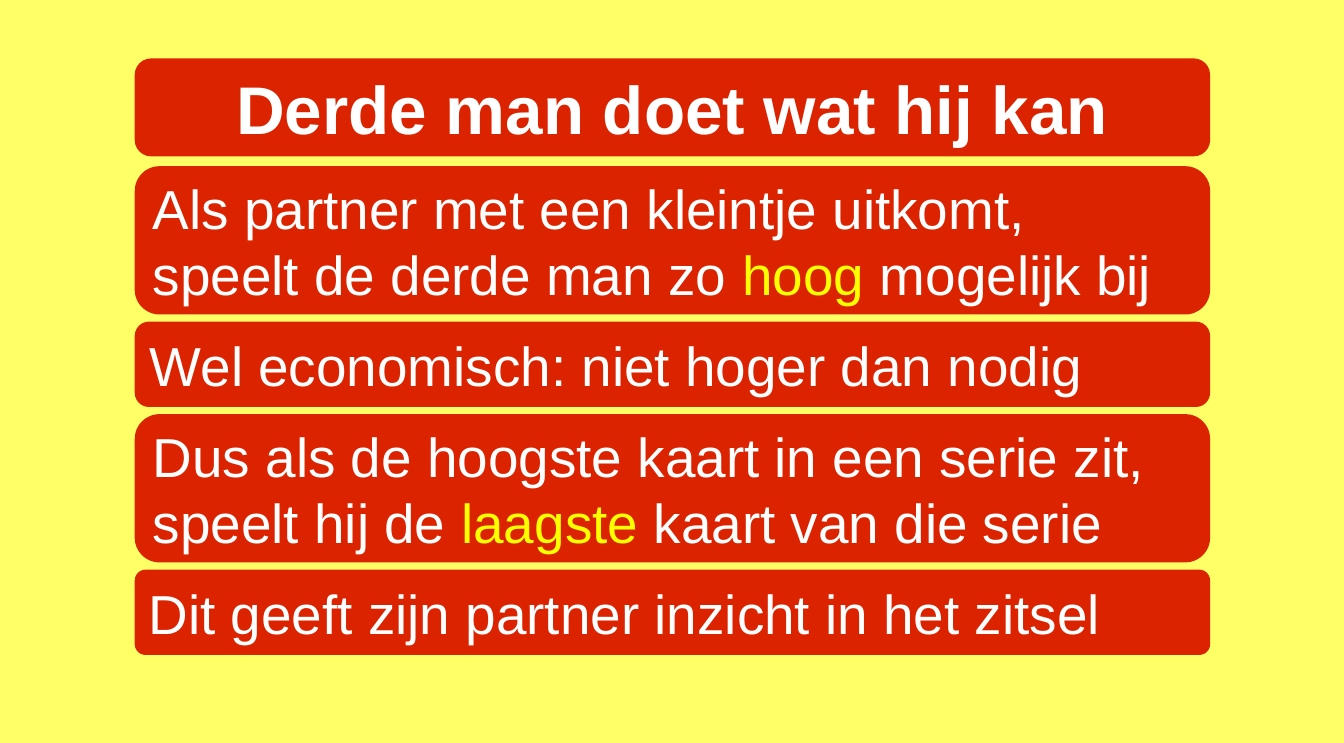
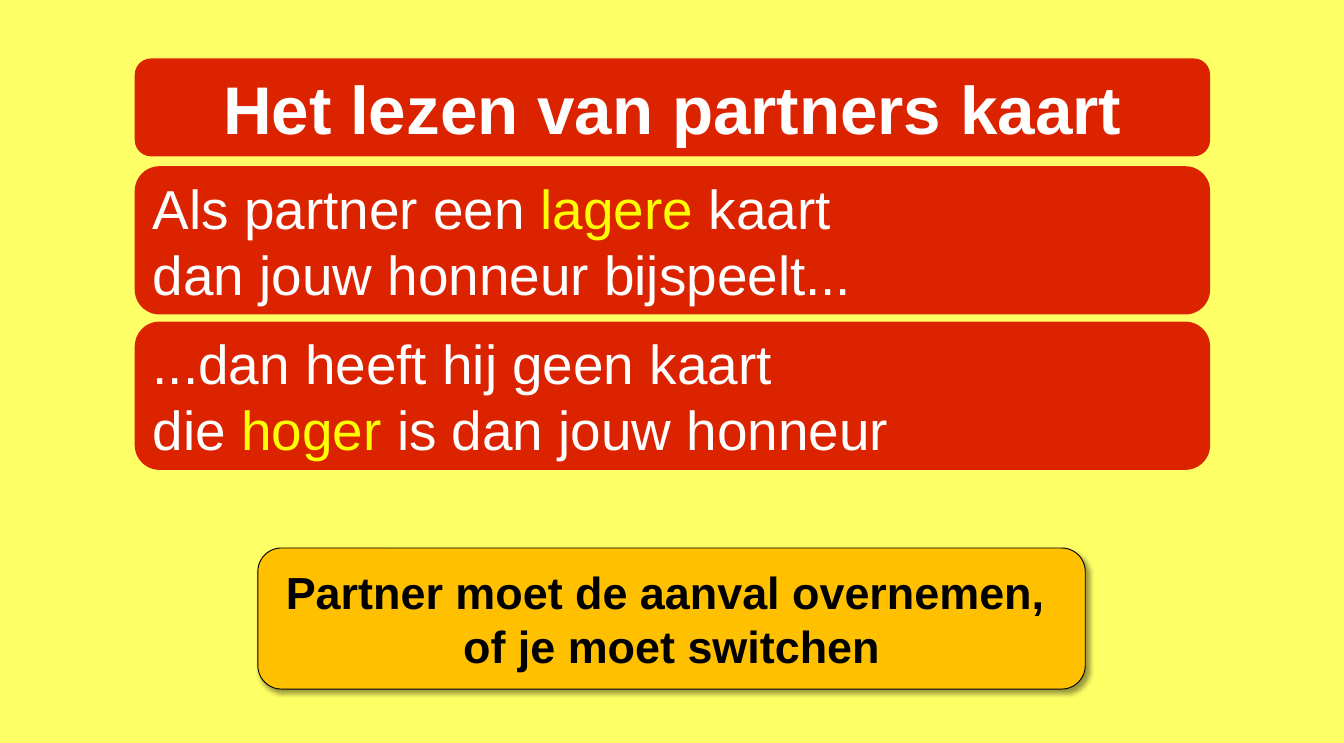
"""Build two slides on third-hand play in bridge."""
from lxml import etree
from pptx import Presentation
from pptx.dml.color import RGBColor
from pptx.enum.shapes import MSO_SHAPE
from pptx.enum.text import MSO_ANCHOR, MSO_AUTO_SIZE, PP_ALIGN
from pptx.oxml.ns import qn
from pptx.util import Inches, Pt

COLORS = {"page": "FFFF66", "card": "DC2300", "text": "FFFFFF",
          "accent": "FFFF00", "callout": "FFC000", "ink": "000000"}
FONT = "Arial"
LEFT, WIDTH = 1.5, 11.97
TITLE_TOP, TITLE_H = 0.65, 1.09
CARDS_TOP, GAP = 1.85, 0.08
ONE_LINE, TWO_LINES = 0.95, 1.65
RADIUS = 0.167

SLIDES = [
    ("Derde man doet wat hij kan", [
        (TWO_LINES, RADIUS, ["Als partner met een kleintje uitkomt,",
                             "speelt de derde man zo *hoog* mogelijk bij"]),
        (ONE_LINE, RADIUS, ["Wel economisch: niet hoger dan nodig"]),
        (TWO_LINES, RADIUS, ["Dus als de hoogste kaart in een serie zit, "
                             "speelt hij de *laagste* kaart van die serie"]),
        (ONE_LINE, 0.127, ["Dit geeft zijn partner inzicht in het zitsel"]),
    ]),
    ("Het lezen van partners kaart", [
        (TWO_LINES, RADIUS, ["Als partner een *lagere* kaart",
                             "dan jouw honneur bijspeelt..."]),
        (TWO_LINES, RADIUS, ["...dan heeft hij geen kaart",
                             "die *hoger* is dan jouw honneur"]),
    ]),
]


def add_box(s, kind, box, fill, adjustments):
    sp = s.shapes.add_shape(kind, *[Inches(v) for v in box])
    sp.shadow.inherit = False
    sp.fill.solid()
    sp.fill.fore_color.rgb = RGBColor.from_string(COLORS[fill])
    sp.line.fill.background()
    for i, value in enumerate(adjustments):
        sp.adjustments[i] = value
    sp.text_frame.word_wrap = True
    sp.text_frame.vertical_anchor = MSO_ANCHOR.MIDDLE
    return sp


def add_text(tf, lines, size, color, align, bold=False):
    for i, line in enumerate(lines):
        p = tf.paragraphs[0] if i == 0 else tf.add_paragraph()
        p.alignment = align
        for j, part in enumerate(line.split("*")):
            r = p.add_run()
            r.text = part
            r.font.name = FONT
            r.font.size = Pt(size)
            r.font.bold = bold
            name = "accent" if j % 2 else color
            r.font.color.rgb = RGBColor.from_string(COLORS[name])


prs = Presentation()
prs.slide_width, prs.slide_height = Inches(14.96), Inches(8.27)
background = prs.slide_master.background.fill
background.solid()
background.fore_color.rgb = RGBColor.from_string(COLORS["page"])

layout = prs.slide_layouts[5]
title = layout.placeholders[0]
title.left, title.top = Inches(LEFT), Inches(TITLE_TOP)
title.width, title.height = Inches(WIDTH), Inches(TITLE_H)
title.text_frame.vertical_anchor = MSO_ANCHOR.MIDDLE
title.text_frame.auto_size = MSO_AUTO_SIZE.NONE

for heading, cards in SLIDES:
    s = prs.slides.add_slide(layout)
    band = add_box(s, MSO_SHAPE.ROUNDED_RECTANGLE,
                   (LEFT, TITLE_TOP, WIDTH, TITLE_H), "card", [RADIUS])
    s.shapes.title._element.addprevious(band._element)
    add_text(s.shapes.title.text_frame, [heading], 54, "text", PP_ALIGN.CENTER, True)
    top = CARDS_TOP
    for height, radius, lines in cards:
        sp = add_box(s, MSO_SHAPE.ROUNDED_RECTANGLE,
                     (LEFT, top, WIDTH, height), "card", [radius])
        tf = sp.text_frame
        tf.margin_left = tf.margin_right = Inches(0.12)
        tf.margin_top = tf.margin_bottom = Inches(0.06)
        add_text(tf, lines, 44, "text", PP_ALIGN.LEFT)
        top += height + GAP

callout = add_box(prs.slides[1], MSO_SHAPE.ROUNDED_RECTANGULAR_CALLOUT,
                  (2.87, 6.1, 9.21, 1.57), "callout", [-0.5, -0.156, RADIUS])
callout.line.color.rgb = RGBColor.from_string(COLORS["ink"])
callout.line.width = Pt(0.75)
add_text(callout.text_frame,
         ["Partner moet de aanval overnemen, ", "of je moet switchen"],
         36, "ink", PP_ALIGN.CENTER, True)
effects = callout._element.spPr.find(qn("a:effectLst"))
shadow = etree.SubElement(effects, qn("a:outerShdw"), blurRad=str(Pt(4)),
                          dist=str(Pt(3)), dir="2700000", algn="tl", rotWithShape="0")
color = etree.SubElement(shadow, qn("a:srgbClr"), val=COLORS["ink"])
etree.SubElement(color, qn("a:alpha"), val="40000")

prs.save("out.pptx")
